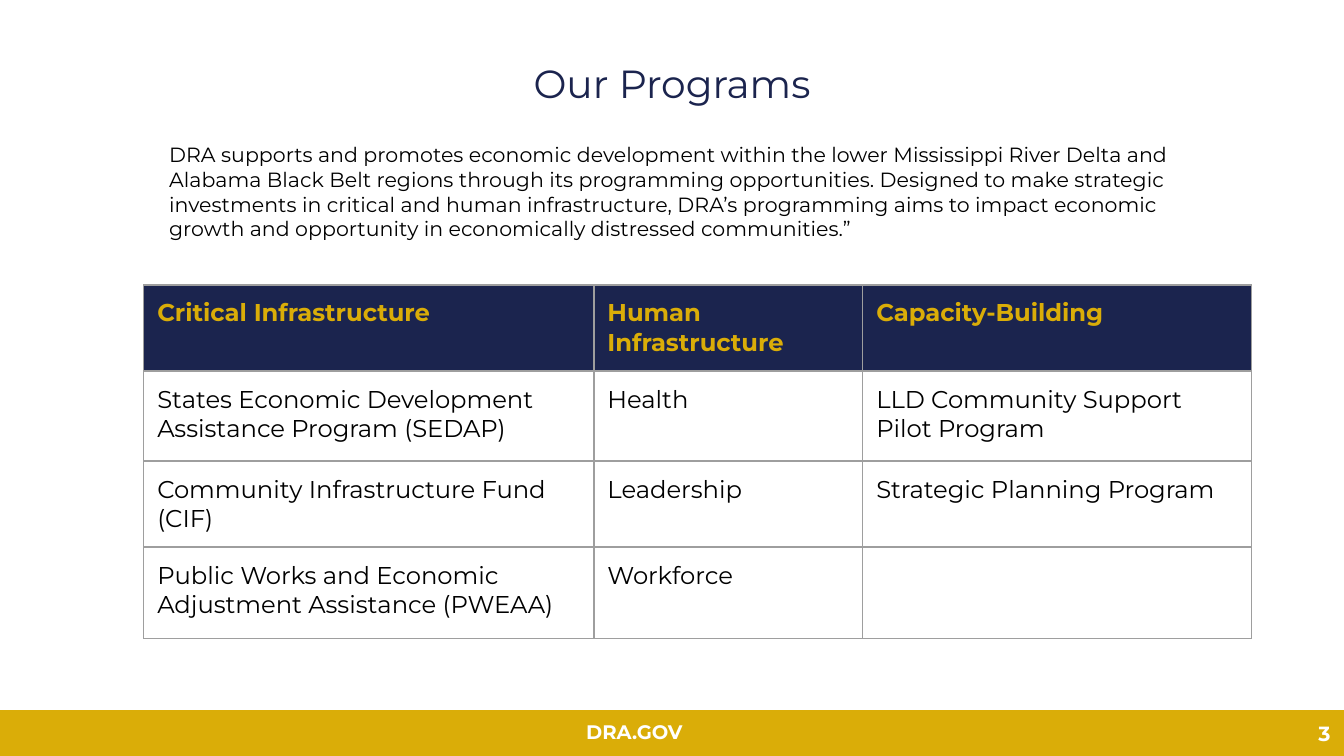
from dataclasses import dataclass

from lxml.etree import SubElement
from pptx import Presentation
from pptx.dml.color import RGBColor
from pptx.enum.shapes import MSO_SHAPE
from pptx.enum.text import MSO_ANCHOR, MSO_AUTO_SIZE, PP_ALIGN
from pptx.oxml.ns import qn
from pptx.util import Inches, Pt

COLORS = {
    "navy": "1B244E",
    "gold": "DAAD08",
    "white": "FFFFFF",
    "black": "000000",
    "border": "9E9E9E",
}
FONT = "Montserrat"
SLIDE_WIDTH = 10
SLIDE_HEIGHT = SLIDE_WIDTH * 9 / 16


@dataclass(frozen=True)
class TextStyle:
    size: float
    color: str
    bold: bool = False
    align: PP_ALIGN = PP_ALIGN.LEFT
    anchor: MSO_ANCHOR = MSO_ANCHOR.TOP
    margin: float = 0.05


@dataclass(frozen=True)
class Box:
    left: float
    top: float
    width: float
    height: float

    def lengths(self) -> tuple:
        return tuple(Inches(v) for v in (self.left, self.top, self.width, self.height))


TITLE = TextStyle(21, "navy", align=PP_ALIGN.CENTER)
INTRO = TextStyle(11, "black", margin=0.1)
SITE = TextStyle(10.5, "white", bold=True, align=PP_ALIGN.CENTER)
PAGE_NUMBER = TextStyle(11, "white", bold=True, align=PP_ALIGN.RIGHT,
                        anchor=MSO_ANCHOR.MIDDLE)
HEADER = TextStyle(13, "gold", bold=True)
BODY = TextStyle(13, "black")

INTRO_TEXT = (
    "DRA supports and promotes economic development within the lower Mississippi "
    "River Delta and Alabama Black Belt regions through its programming "
    "opportunities. Designed to make strategic investments in critical and human "
    "infrastructure, DRA’s programming aims to impact economic growth and "
    "opportunity in economically distressed communities.”"
)
PROGRAMS = [
    ["Critical Infrastructure", "Human Infrastructure", "Capacity-Building"],
    ["States Economic Development Assistance Program (SEDAP)", "Health",
     "LLD Community Support Pilot Program"],
    ["Community Infrastructure Fund (CIF)", "Leadership", "Strategic Planning Program"],
    ["Public Works and Economic Adjustment Assistance (PWEAA)", "Workforce", ""],
]
COLUMN_WIDTHS = [3.35, 2, 2.89]
ROW_HEIGHTS = [0.55, 0.67, 0.63, 0.68]


def rgb(name: str) -> RGBColor:
    return RGBColor.from_string(COLORS[name])


def add_run(paragraph, text: str, style: TextStyle) -> None:
    paragraph.alignment = style.align
    run = paragraph.add_run()
    run.text = text
    run.font.name = FONT
    run.font.size = Pt(style.size)
    run.font.bold = style.bold
    run.font.color.rgb = rgb(style.color)


def write_text(shape, text: str, style: TextStyle) -> None:
    frame = shape.text_frame
    frame.word_wrap = True
    frame.auto_size = MSO_AUTO_SIZE.NONE
    frame.vertical_anchor = style.anchor
    frame.margin_left = frame.margin_right = Inches(0.1)
    frame.margin_top = frame.margin_bottom = Inches(style.margin)
    add_run(frame.paragraphs[0], text, style)


def add_text(slide, box: Box, text: str, style: TextStyle) -> None:
    write_text(slide.shapes.add_textbox(*box.lengths()), text, style)


def add_borders(cell) -> None:
    properties = cell._tc.get_or_add_tcPr()
    for side in ("a:lnL", "a:lnR", "a:lnT", "a:lnB"):
        line = SubElement(properties, qn(side), w=str(Pt(0.75)))
        fill = SubElement(line, qn("a:solidFill"))
        SubElement(fill, qn("a:srgbClr"), val=COLORS["border"])


def format_cell(cell, text: str, is_header: bool) -> None:
    cell.margin_left = cell.margin_right = Inches(0.1)
    cell.margin_top = cell.margin_bottom = Inches(0.1)
    add_borders(cell)
    if is_header:
        cell.fill.solid()
        cell.fill.fore_color.rgb = rgb("navy")
    else:
        cell.fill.background()
    if text:
        add_run(cell.text_frame.paragraphs[0], text, HEADER if is_header else BODY)


def add_programs_table(slide, left: float, top: float) -> None:
    box = Box(left, top, sum(COLUMN_WIDTHS), sum(ROW_HEIGHTS))
    table = slide.shapes.add_table(
        len(ROW_HEIGHTS), len(COLUMN_WIDTHS), *box.lengths()).table
    table.horz_banding = False
    for column, width in zip(table.columns, COLUMN_WIDTHS):
        column.width = Inches(width)
    for index, (row, height) in enumerate(zip(table.rows, ROW_HEIGHTS)):
        row.height = Inches(height)
        for cell, text in zip(row.cells, PROGRAMS[index]):
            format_cell(cell, text, is_header=index == 0)


def add_footer(slide) -> None:
    height = 0.34
    bar = slide.shapes.add_shape(
        MSO_SHAPE.RECTANGLE,
        *Box(0, SLIDE_HEIGHT - height, SLIDE_WIDTH, height).lengths())
    bar.shadow.inherit = False
    bar.fill.solid()
    bar.fill.fore_color.rgb = rgb("gold")
    bar.line.fill.background()
    write_text(bar, "3", PAGE_NUMBER)
    add_text(slide, Box(4, 5.31, 1.44, 0.29), "DRA.GOV", SITE)


def main() -> None:
    presentation = Presentation()
    presentation.slide_width = Inches(SLIDE_WIDTH)
    presentation.slide_height = Inches(SLIDE_HEIGHT)
    slide = presentation.slides.add_slide(presentation.slide_layouts[5])

    # Footer bar with page number and site name
    add_footer(slide)

    # Title and introduction
    title = slide.shapes.title
    title.left, title.top, title.width, title.height = Box(1.47, 0.39, 7.06, 0.45).lengths()
    write_text(title, "Our Programs", TITLE)
    add_text(slide, Box(1.16, 0.96, 7.69, 0.94), INTRO_TEXT, INTRO)

    # Programs by category
    add_programs_table(slide, 1.07, 2.12)

    presentation.save("out.pptx")


if __name__ == "__main__":
    main()
